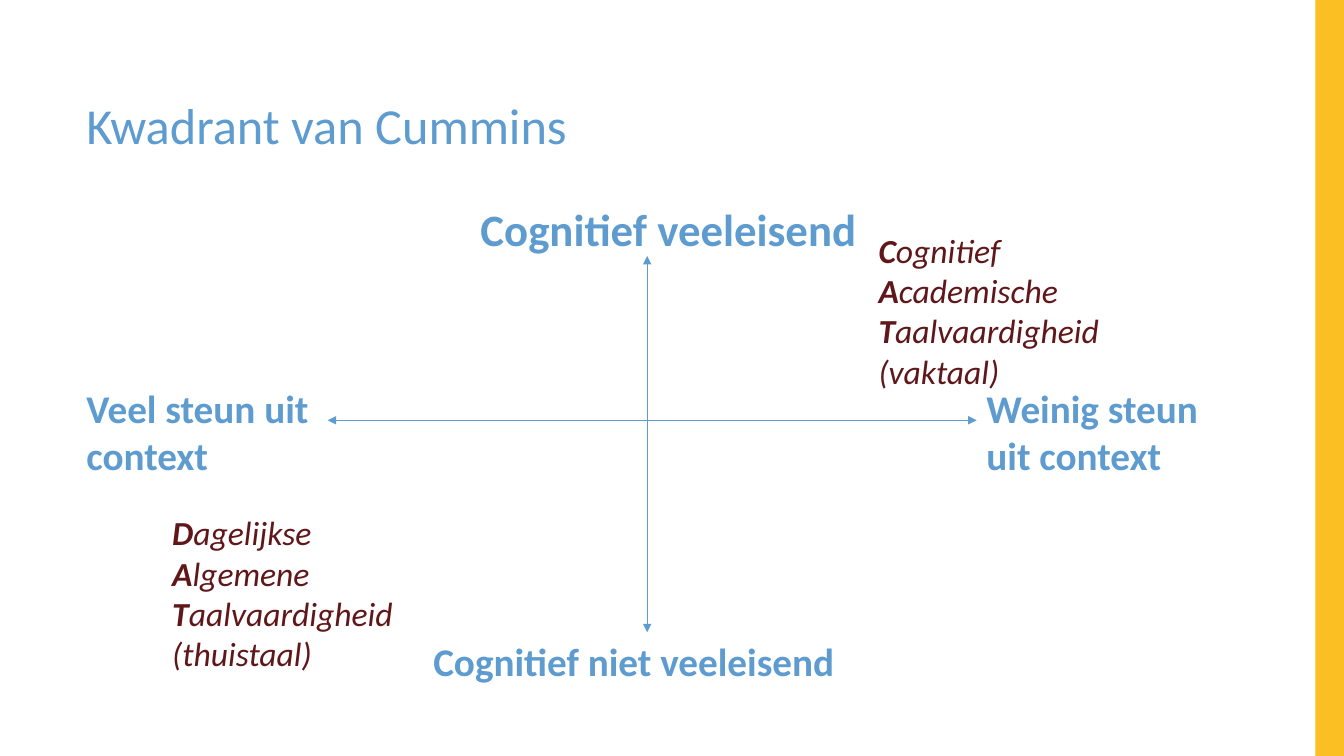
from lxml import etree
from pptx import Presentation
from pptx.dml.color import RGBColor
from pptx.enum.shapes import MSO_CONNECTOR, MSO_SHAPE
from pptx.enum.text import MSO_AUTO_SIZE
from pptx.oxml.ns import qn
from pptx.util import Cm, Pt

STRAIGHT = MSO_CONNECTOR.STRAIGHT
RECTANGLE = MSO_SHAPE.RECTANGLE
GROW = MSO_AUTO_SIZE.SHAPE_TO_FIT_TEXT
TOP_SIDE = 0

COLOURS = {"blue": "5E9BCF", "maroon": "601719", "yellow": "FBBF24"}
FONT = "Calibri"
SLIDE_WIDTH, SLIDE_HEIGHT = 33.87, 19.05
BAR_WIDTH = 0.72

TITLE = ("Kwadrant van Cummins", (1.93, 2.41, 29.21, 2.0), 36)

# Name: (text, (left, top, width, height), size)
AXIS_LABELS = {
    "top": ("Cognitief veeleisend", (11.86, 4.95, 11.15, 1.62), 32),
    "left": ("Veel steun uit context", (1.93, 9.55, 7.24, 2.65), 28),
    "bottom": ("Cognitief niet veeleisend", (10.67, 15.93, 11.28, 1.45), 28),
    "right": ("Weinig steun uit context", (24.61, 9.55, 6.27, 2.65), 28),
}

# (words whose initial is bold, closing line, (left, top, width, height))
LANGUAGE_TYPES = [
    (["Dagelijkse", "Algemene", "Taalvaardigheid"], "(thuistaal)",
     (4.09, 12.78, 6.1, 4.37)),
    (["Cognitief", "Academische", "Taalvaardigheid"], "(vaktaal)",
     (21.89, 5.66, 6.81, 4.37)),
]

# (start x, start y, end x, end y)
VERTICAL_AXIS = (16.31, 6.45, 16.31, 15.93)
HORIZONTAL_AXIS = (8.26, 10.59, 24.61, 10.59)


def colour(name):
    return RGBColor.from_string(COLOURS[name])


def add_run(paragraph, text, colour_name, **font_format):
    run = paragraph.add_run()
    run.text = text
    run.font.color.rgb = colour(colour_name)
    for name, value in {"name": FONT, **font_format}.items():
        setattr(run.font, name, value)


def add_text_box(slide, box):
    shape = slide.shapes.add_textbox(*map(Cm, box))
    shape.text_frame.word_wrap = True
    shape.text_frame.auto_size = GROW
    return shape


def add_label(slide, text, box, size, bold=True):
    shape = add_text_box(slide, box)
    add_run(shape.text_frame.paragraphs[0], text, "blue", size=Pt(size), bold=bold)
    return shape


def add_language_type(slide, words, closing, box):
    frame = add_text_box(slide, box).text_frame
    style = {"size": Pt(24), "italic": True}
    for index, word in enumerate(words):
        space = " " if index < len(words) - 1 else ""
        add_run(frame.paragraphs[0], word[0], "maroon", bold=True, **style)
        add_run(frame.paragraphs[0], word[1:] + space, "maroon", bold=False, **style)
    add_run(frame.add_paragraph(), closing, "maroon", bold=False, **style)


def add_axis(slide, ends):
    """Draw a thin line with an arrowhead at both ends."""
    axis = slide.shapes.add_connector(STRAIGHT, *map(Cm, ends))
    axis.line.color.rgb = colour("blue")
    axis.line.width = Pt(0.5)
    line = axis.line._get_or_add_ln()
    for end in ("a:headEnd", "a:tailEnd"):
        etree.SubElement(line, qn(end), type="triangle")
    etree.SubElement(axis._element.spPr, qn("a:effectLst"))
    return axis


def add_side_bar(slide):
    box = (SLIDE_WIDTH - BAR_WIDTH, 0, BAR_WIDTH, SLIDE_HEIGHT)
    bar = slide.shapes.add_shape(RECTANGLE, *map(Cm, box))
    bar.shadow.inherit = False
    bar.fill.solid()
    bar.fill.fore_color.rgb = colour("yellow")
    bar.line.fill.background()


def main():
    presentation = Presentation()
    presentation.slide_width = Cm(SLIDE_WIDTH)
    presentation.slide_height = Cm(SLIDE_HEIGHT)
    slide = presentation.slides.add_slide(presentation.slide_layouts[6])

    add_side_bar(slide)
    title = add_label(slide, *TITLE, bold=False)
    title.text_frame.paragraphs[0].line_spacing = 0.9

    vertical_axis = add_axis(slide, VERTICAL_AXIS)
    add_axis(slide, HORIZONTAL_AXIS)
    labels = {side: add_label(slide, *label) for side, label in AXIS_LABELS.items()}
    vertical_axis.end_connect(labels["bottom"], TOP_SIDE)

    for language_type in LANGUAGE_TYPES:
        add_language_type(slide, *language_type)

    presentation.save("out.pptx")


if __name__ == "__main__":
    main()
